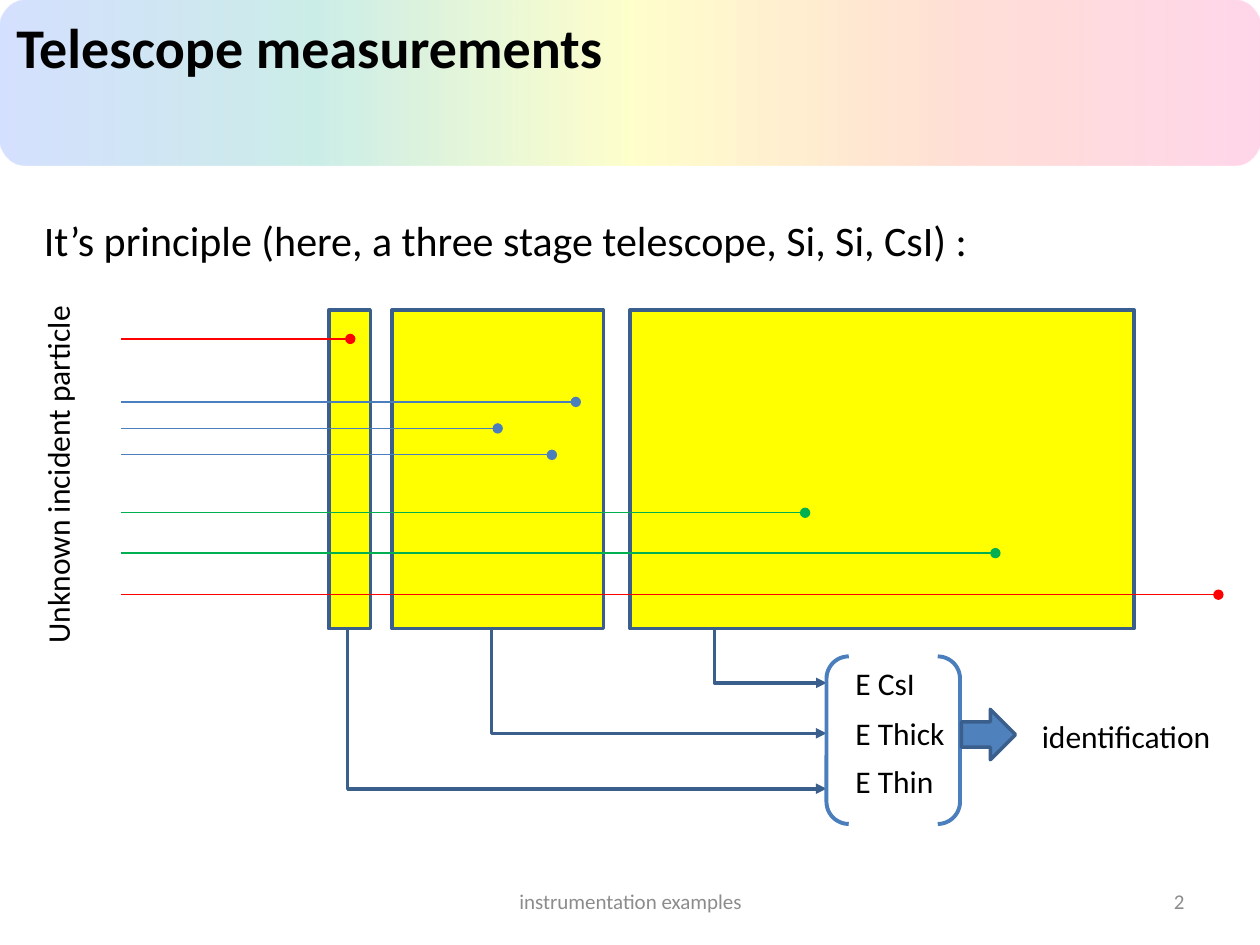
from lxml.etree import SubElement
from pptx import Presentation
from pptx.dml.color import RGBColor
from pptx.enum.shapes import MSO_CONNECTOR, MSO_SHAPE as Shape
from pptx.enum.text import MSO_ANCHOR as Anchor, PP_ALIGN as Align
from pptx.oxml.ns import qn
from pptx.util import Inches, Pt

BLACK = RGBColor(0, 0, 0)
GREY = RGBColor(0x8C, 0x8C, 0x8C)
YELLOW = RGBColor(0xFF, 0xFF, 0)
RED = RGBColor(0xFF, 0, 0)
GREEN = RGBColor(0, 0xB0, 0x50)
BLUE = RGBColor(0x4B, 0x7E, 0xBC)
FILL = RGBColor(0x4F, 0x81, 0xBD)
NAVY = RGBColor(0x3A, 0x5F, 0x8C)

RAINBOW = ["3366FF", "01A78F", "FFFF00", "FF6633", "FF3399"]
TITLE = "Telescope measurements"

# text, box, format
TEXTS = [
    ("It’s principle (here, a three stage telescope, Si, Si, CsI) :",
     (0.25, 1.65, 7.6, 0.5), dict(size=24)),
    ("Unknown incident particle", (-1, 3.55, 2.91, 0.4), dict(turn=270)),
    ("E CsI", (6.69, 5.22, 0.68, 0.4), {}),
    ("E Thick", (6.69, 5.62, 0.92, 0.4), {}),
    ("E Thin", (6.69, 6, 0.83, 0.4), {}),
    ("identification", (8.17, 5.64, 1.56, 0.4), {}),
    ("instrumentation examples", (3.42, 6.95, 3.17, 0.4),
     dict(size=12, color=GREY, align=Align.CENTER, wrap=True)),
    ("2", (7.17, 6.95, 2.33, 0.4),
     dict(size=12, color=GREY, align=Align.RIGHT, wrap=True)),
]

TOP, HIGH = 2.46, 2.53
STAGES = [(2.61, 0.33), (3.11, 1.68), (5, 4)]  # left, width

START = 0.96
TRACKS = [  # height, end, colour
    (2.69, 2.78, RED),
    (3.19, 4.57, BLUE), (3.4, 3.95, BLUE), (3.61, 4.38, BLUE),
    (4.07, 6.39, GREEN), (4.39, 7.9, GREEN),
    (4.72, 9.67, RED),
]

BRACKET = 6.56
SIGNALS = [(5.67, 5.42), (3.9, 5.82), (2.76, 6.26)]  # left, end height


def inches(box):
    return [Inches(v) for v in box]


def style(shape, fill=None, line=None, width=2):
    shape.shadow.inherit = False
    if fill is None:
        shape.fill.background()
    else:
        shape.fill.solid()
        shape.fill.fore_color.rgb = fill
    if line is None:
        shape.line.fill.background()
    else:
        shape.line.color.rgb = line
        shape.line.width = Pt(width)


def add_tip(shape, kind):
    """Put an arrowhead at the far end of a line."""
    SubElement(shape.line._get_or_add_ln(), qn("a:tailEnd"), type=kind)


def write(shape, text, size=18, color=BLACK, bold=False, align=Align.LEFT,
          anchor=Anchor.MIDDLE, wrap=False, turn=0):
    shape.rotation = turn
    frame = shape.text_frame
    frame.word_wrap = wrap
    frame.vertical_anchor = anchor
    frame.text = text
    para = frame.paragraphs[0]
    para.alignment = align
    look = dict(name="Calibri", size=Pt(size), bold=bold)
    for key, value in look.items():
        setattr(para.runs[0].font, key, value)
    para.runs[0].font.color.rgb = color


def add_banner(shapes):
    banner = shapes.add_shape(Shape.ROUNDED_RECTANGLE, *inches((0, 0, 10, 1.31)))
    style(banner)
    banner.fill.gradient()
    banner.fill.gradient_angle = 0
    stops = banner._element.spPr.find(".//" + qn("a:gsLst"))
    for stop in list(stops):
        stops.remove(stop)
    for i, code in enumerate(RAINBOW):
        stop = SubElement(stops, qn("a:gs"), pos=str(i * 25000))
        color = SubElement(stop, qn("a:srgbClr"), val=code)
        SubElement(color, qn("a:alpha"), val="20000")
    shapes._spTree.insert(2, banner._element)  # behind the title


def add_track(shapes, y, end, color):
    track = shapes.add_connector(
        MSO_CONNECTOR.STRAIGHT, *inches((START, y, end, y)))
    track.line.color.rgb = color
    track.line.width = Pt(0.75)
    add_tip(track, "oval")
    SubElement(track._element.spPr, qn("a:effectLst"))


def add_signal(shapes, x, y):
    """Lead a stage's signal down, then right to the bracket."""
    path = shapes.build_freeform(Inches(x), Inches(TOP + HIGH))
    path.add_line_segments(
        [inches((x, y)), inches((BRACKET, y))], close=False)
    signal = path.convert_to_shape()
    style(signal, line=NAVY)
    add_tip(signal, "triangle")


def main():
    prs = Presentation()
    prs.slide_width, prs.slide_height = Inches(10), Inches(7.5)
    slide = prs.slides.add_slide(prs.slide_layouts[5])
    shapes = slide.shapes

    add_banner(shapes)
    title = shapes.title
    title.left, title.top, title.width, title.height = inches(
        (0.03, 0.05, 4.9, 0.64))
    write(title, TITLE, size=32, bold=True, anchor=Anchor.TOP)

    for left, width in STAGES:
        stage = shapes.add_shape(
            Shape.RECTANGLE, *inches((left, TOP, width, HIGH)))
        style(stage, YELLOW, NAVY)
    for track in TRACKS:
        add_track(shapes, *track)
    for signal in SIGNALS:
        add_signal(shapes, *signal)

    pair = shapes.add_shape(
        Shape.DOUBLE_BRACKET, *inches((BRACKET, 5.21, 1.06, 1.33)))
    style(pair, line=BLUE, width=2.25)
    arrow = shapes.add_shape(
        Shape.RIGHT_ARROW, *inches((7.63, 5.63, 0.43, 0.4)))
    style(arrow, FILL, NAVY)

    for text, box, look in TEXTS:
        write(shapes.add_textbox(*inches(box)), text, **look)
    prs.save("out.pptx")


if __name__ == "__main__":
    main()
